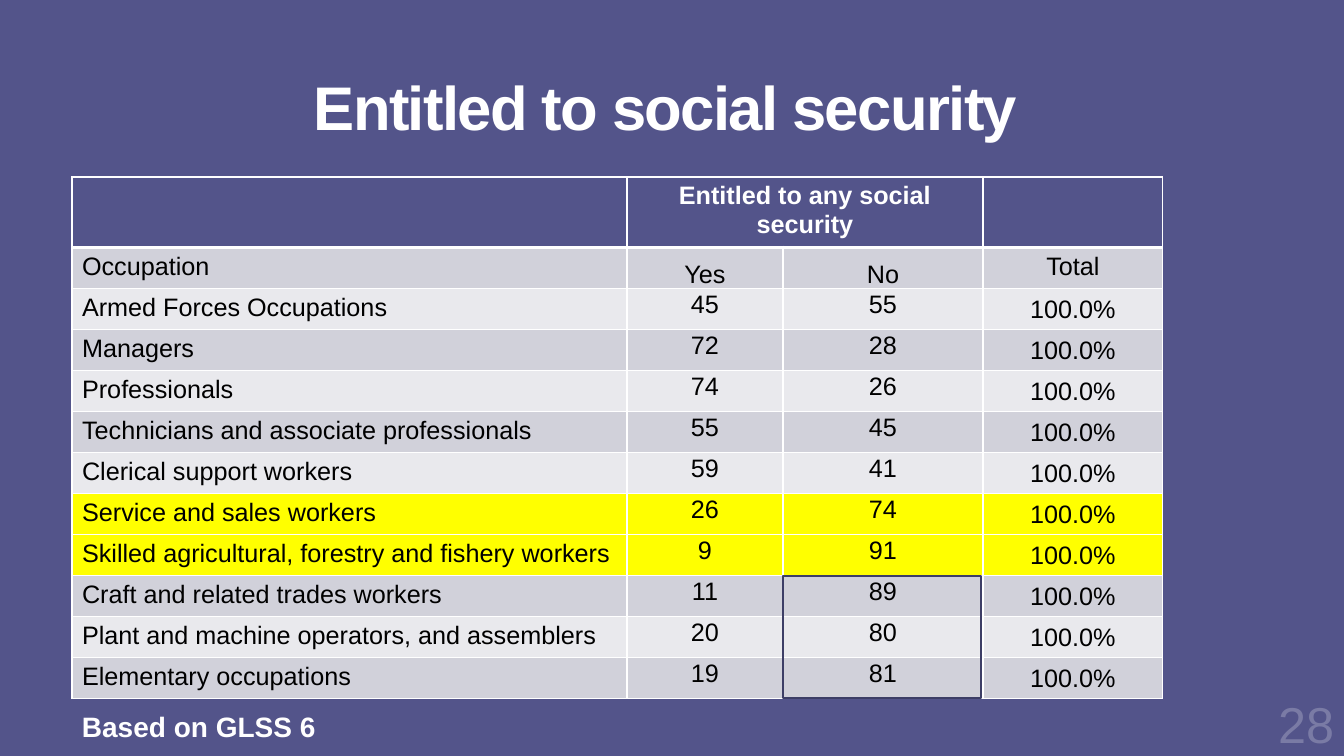
"""Build a slide with a table of social security entitlement by occupation."""
import lxml.etree
import pptx
import pptx.dml.color
import pptx.enum.shapes
import pptx.enum.text
import pptx.oxml.ns
import pptx.util

RGBColor = pptx.dml.color.RGBColor
PURPLE = RGBColor(0x53, 0x54, 0x8A)
OUTLINE = RGBColor(0x3D, 0x3E, 0x66)
FADED = RGBColor(0x7A, 0x7B, 0xA5)
WHITE = RGBColor(0xFF, 0xFF, 0xFF)
BLACK = RGBColor(0, 0, 0)
DARK_BAND = RGBColor(0xD1, 0xD1, 0xDA)
LIGHT_BAND = RGBColor(0xE9, 0xE9, 0xED)
YELLOW = RGBColor(0xFF, 0xFF, 0)

ALIGN = pptx.enum.text.PP_ALIGN
ANCHOR = pptx.enum.text.MSO_ANCHOR

OCCUPATIONS = [
    ("Armed Forces Occupations", 45, 55),
    ("Managers", 72, 28),
    ("Professionals", 74, 26),
    ("Technicians and associate professionals", 55, 45),
    ("Clerical support workers", 59, 41),
    ("Service and sales workers", 26, 74),
    ("Skilled agricultural, forestry and fishery workers", 9, 91),
    ("Craft and related trades workers", 11, 89),
    ("Plant and machine operators, and assemblers", 20, 80),
    ("Elementary occupations", 19, 81),
]
HIGHLIGHTED = {"Service and sales workers", "Skilled agricultural, forestry and fishery workers"}


def px(length):
    """Turn pixels into EMU."""
    return pptx.util.Emu(round(length * 914400 / 100.8))


class SlideBuilder:
    """Hold the style and the current slide."""

    font = "Arial"

    def __init__(self, deck):
        """Add a blank page with a purple background."""
        self.page = deck.slides.add_slide(deck.slide_layouts[6])
        self.page.background.fill.solid()
        self.page.background.fill.fore_color.rgb = PURPLE

    def style(self, para, size, color, bold, align):
        """Format a paragraph and its runs."""
        para.alignment = align
        for span in para.runs:
            span.font.name = self.font
            span.font.size = pptx.util.Pt(size)
            span.font.bold = bold
            span.font.color.rgb = color

    def text(self, area, words, size, color=WHITE, bold=True, align=ALIGN.LEFT,
             anchor=ANCHOR.TOP, wrap=True):
        """Add a text box and return its paragraph."""
        frame = self.page.shapes.add_textbox(*map(px, area)).text_frame
        frame.word_wrap = wrap
        frame.vertical_anchor = anchor
        frame.text = words
        para = frame.paragraphs[0]
        self.style(para, size, color, bold, align)
        return para

    def table(self, left, top, widths, heights):
        """Add a plain table with the given column widths and row heights."""
        area = map(px, (left, top, sum(widths), sum(heights)))
        table = self.page.shapes.add_table(len(heights), len(widths), *area).table
        table.first_row = table.horz_banding = False
        for column, width in zip(table.columns, widths):
            column.width = px(width)
        for row, height in zip(table.rows, heights):
            row.height = px(height)
        return table

    def cell(self, cell, words, fill, color=BLACK, bold=False, align=ALIGN.CENTER,
             anchor=ANCHOR.TOP, inset=None, top_line=1, bottom_line=1):
        """Fill a table cell, give it white borders and format its text."""
        properties = cell._tc.get_or_add_tcPr()
        for side, points in (("L", 1), ("R", 1), ("T", top_line), ("B", bottom_line)):
            line = lxml.etree.SubElement(properties, pptx.oxml.ns.qn(f"a:ln{side}"),
                                         w=str(pptx.util.Pt(points)))
            solid = lxml.etree.SubElement(line, pptx.oxml.ns.qn("a:solidFill"))
            lxml.etree.SubElement(solid, pptx.oxml.ns.qn("a:srgbClr"), val=str(WHITE))
        cell.fill.solid()
        cell.fill.fore_color.rgb = fill
        cell.vertical_anchor = anchor
        cell.text = words
        para = cell.text_frame.paragraphs[0]
        self.style(para, 18, color, bold, align)
        if inset is not None:
            cell.margin_left = cell.margin_right = px(inset)
            cell.margin_top = cell.margin_bottom = 0
            para.line_spacing = 1.07

    def frame(self, area):
        """Add an unfilled rectangle."""
        box = self.page.shapes.add_shape(
            pptx.enum.shapes.MSO_SHAPE.RECTANGLE, *map(px, area))
        box.shadow.inherit = False
        box.fill.background()
        box.line.color.rgb = OUTLINE
        box.line.width = pptx.util.Pt(1.5)


def main():
    """Build and save the deck."""
    deck = pptx.Presentation()
    deck.slide_width, deck.slide_height = px(1344), px(756)
    slide = SlideBuilder(deck)

    title = slide.text((72, 21, 1187, 182), "Entitled to social security", 44,
                       align=ALIGN.CENTER, anchor=ANCHOR.MIDDLE)
    title.line_spacing = 0.85
    title.runs[0].font._element.set("spc", "-120")

    table = slide.table(72, 177, [555, 156, 200, 180], [66] + [41] * 11)
    for column, words in enumerate(("", "Entitled to any social security", "", "")):
        slide.cell(table.cell(0, column), words, PURPLE, WHITE, True, bottom_line=3)
    table.cell(0, 1).merge(table.cell(0, 2))

    for column, words in enumerate(("Occupation", "Yes", "No", "Total")):
        middle = column in (1, 2)
        slide.cell(table.cell(1, column), words, DARK_BAND,
                   align=ALIGN.CENTER if column else ALIGN.LEFT,
                   anchor=ANCHOR.BOTTOM if middle else ANCHOR.TOP,
                   inset=6 if middle else None, top_line=3)

    for row, (occupation, yes, no) in enumerate(OCCUPATIONS, 2):
        fill = LIGHT_BAND if row % 2 == 0 else DARK_BAND
        if occupation in HIGHLIGHTED:
            fill = YELLOW
        slide.cell(table.cell(row, 0), occupation, fill, align=ALIGN.LEFT)
        for column, share in enumerate((yes, no), 1):
            slide.cell(table.cell(row, column), str(share), fill, inset=7)
        slide.cell(table.cell(row, 3), "100.0%", fill, anchor=ANCHOR.MIDDLE, inset=6)

    slide.frame((783, 576, 198, 122))
    slide.text((72, 705, 256, 44), "Based on GLSS 6", 20, wrap=False)
    slide.text((1224, 690, 120, 66), "28", 36, FADED, False, ALIGN.RIGHT, ANCHOR.MIDDLE)
    deck.save("out.pptx")


if __name__ == "__main__":
    main()
